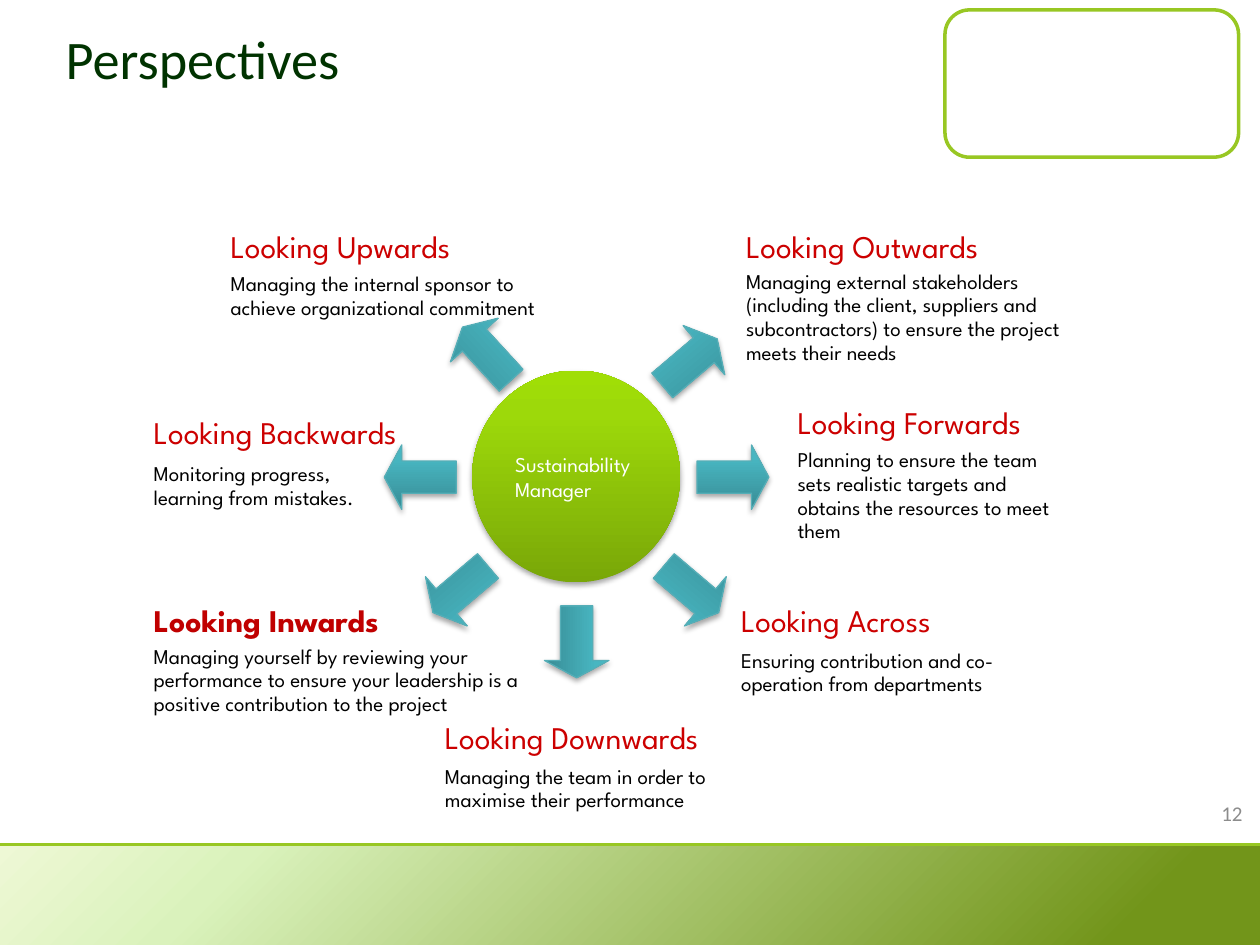
from copy import deepcopy

from lxml import etree
from pptx import Presentation
from pptx.dml.color import RGBColor
from pptx.enum.shapes import MSO_CONNECTOR, MSO_SHAPE
from pptx.enum.text import MSO_ANCHOR, PP_ALIGN
from pptx.oxml import parse_xml
from pptx.oxml.ns import nsdecls, qn
from pptx.util import Cm, Pt

LEFT, RIGHT = PP_ALIGN.LEFT, PP_ALIGN.RIGHT
MIDDLE = MSO_ANCHOR.MIDDLE
FONT = "League Spartan"
COLORS = {
    "white": "FFFFFF", "black": "000000", "title": "003300", "number": "8C8C8C",
    "green": "98C723", "heading": "CC0000", "highlight": "C00000", "arrow_line": "55AEB7",
}
RGB = {name: RGBColor.from_string(value) for name, value in COLORS.items()}
BAR = [(0, "EEF8D5"), (0.19, "DAF2BC"), (0.89, "72951A")]
CIRCLE = [(0, "79A708"), (0.8, "9DD90A"), (1, "A0DE06")]
ARROW = [(0, "388C95"), (0.8, "48B6C1"), (1, "46B9C4")]


def shade(sp, stops, angle, shadow=True):
    """Give a shape a three-stop gradient and, if wanted, a soft shadow below."""
    sp.shadow.inherit = False
    sp.fill.gradient()
    sp.fill.gradient_angle = angle
    stop_list = sp._element.spPr.find(".//" + qn("a:gsLst"))
    stop_list.append(deepcopy(stop_list[-1]))
    for stop, (position, color) in zip(sp.fill.gradient_stops, stops):
        stop.position = position
        stop.color.rgb = RGBColor.from_string(color)
    if shadow:
        sp._element.spPr.find(qn("a:effectLst")).append(parse_xml(
            f'<a:outerShdw {nsdecls("a")} blurRad="{Pt(3.1)}" dist="{Pt(1.8)}" dir="5400000" '
            'rotWithShape="0"><a:srgbClr val="000000"><a:alpha val="35000"/></a:srgbClr>'
            '</a:outerShdw>'))


def add_text(left, top, width, height, text, size, color, font=FONT, margin=0):
    tf = s.shapes.add_textbox(Cm(left), Cm(top), Cm(width), Cm(height)).text_frame
    tf.word_wrap = True
    tf.margin_left = tf.margin_right = Cm(margin)
    tf.margin_top = tf.margin_bottom = 0
    p = tf.paragraphs[0]
    p.text = text
    p.font.size, p.font.name, p.font.color.rgb = Pt(size), font, RGB[color]
    return tf


prs = Presentation()
prs.slide_width, prs.slide_height = Cm(25.4), Cm(19.05)
s = prs.slides.add_slide(prs.slide_layouts[5])

# Frame and footer band
sp = s.shapes.add_shape(MSO_SHAPE.ROUNDED_RECTANGLE, Cm(19.05), Cm(0.2), Cm(5.92), Cm(2.97))
sp.shadow.inherit = False
sp.fill.solid()
sp.fill.fore_color.rgb = RGB["white"]
sp.line.color.rgb = RGB["green"]
sp.line.width = Pt(2)

sp = s.shapes.add_shape(MSO_SHAPE.RECTANGLE, 0, Cm(17.04), prs.slide_width, Cm(2.01))
shade(sp, BAR, 315, shadow=False)
sp.line.fill.background()

rule = s.shapes.add_connector(MSO_CONNECTOR.STRAIGHT, 0, Cm(17.02), prs.slide_width, Cm(17.02))
rule.line.color.rgb = RGB["green"]
rule.line.width = Pt(1.5)
etree.SubElement(rule._element.spPr, qn("a:effectLst"))

# Title
title = s.shapes.title
title.left, title.top, title.width, title.height = Cm(1.07), 0, Cm(17.78), Cm(2.34)
title.text_frame.vertical_anchor = MIDDLE
p = title.text_frame.paragraphs[0]
p.text = "Perspectives"
p.alignment = LEFT
p.font.size, p.font.name, p.font.color.rgb = Pt(31), "Calibri", RGB["title"]

# Perspectives: left, heading top, body top, body width, body lines, heading, body
perspectives = [
    (4.65, 4.57, 5.49, 6.9, 3, "Looking Upwards",
     "Managing the internal sponsor to achieve organizational commitment"),
    (3.1, 8.33, 9.32, 5, 2, "Looking Backwards",
     "Monitoring progress, learning from mistakes."),
    (3.1, 12.12, 13, 7.7, 4, "Looking Inwards",
     "Managing yourself by reviewing your performance to ensure your leadership "
     "is a positive contribution to the project"),
    (8.97, 14.48, 15.42, 6.4, 2, "Looking Downwards",
     "Managing the team in order to maximise their performance"),
    (16.08, 8.13, 9.04, 5.5, 4, "Looking Forwards",
     "Planning to ensure the team sets realistic targets and obtains the resources "
     "to meet them"),
    (15.04, 4.57, 5.44, 7.25, 4, "Looking Outwards",
     "Managing external stakeholders (including the client, suppliers and subcontractors) "
     "to ensure the project meets their needs"),
    (14.94, 12.12, 13.08, 5.5, 3, "Looking Across",
     "Ensuring contribution and co-operation from departments"),
]
for left, top, body_top, width, lines, heading, body in perspectives:
    current = heading == "Looking Inwards"
    tf = add_text(left, top, 6.6, 0.76, heading, 18, "highlight" if current else "heading")
    tf.paragraphs[0].font.bold = current
    tf = add_text(left, body_top, width, 0.48 * lines, body, 12, "black")
    tf.paragraphs[0].line_spacing = Pt(13.5)

# Central role
sp = s.shapes.add_shape(MSO_SHAPE.OVAL, Cm(9.52), Cm(7.47), Cm(4.19), Cm(4.27))
shade(sp, CIRCLE, 90)
sp.line.fill.background()
tf = sp.text_frame
tf.word_wrap = True
tf.vertical_anchor = MIDDLE
p = tf.paragraphs[0]
p.text = "Sustainability Manager"
p.alignment = LEFT
p.font.size, p.font.name, p.font.color.rgb = Pt(12), FONT, RGB["white"]

# Arrows: left, top, rotation, flips
arrows = [
    (14.05, 8.97, 0, ""),
    (7.75, 8.97, 0, "H"),
    (13.18, 6.65, 319.7, ""),
    (9.09, 6.48, 47.5, "H"),
    (13.21, 11.23, 40.3, "V"),
    (8.56, 11.23, 319.7, "HV"),
    (10.9, 12.29, 90, ""),
]
for left, top, rotation, flips in arrows:
    sp = s.shapes.add_shape(MSO_SHAPE.RIGHT_ARROW, Cm(left), Cm(top), Cm(1.45), Cm(1.3))
    sp.adjustments[0], sp.adjustments[1] = 0.5, 0.27
    sp.rotation = rotation
    for axis in flips:
        sp._element.spPr.xfrm.set("flip" + axis, "1")
    shade(sp, ARROW, 90)
    sp.line.color.rgb = RGB["arrow_line"]
    sp.line.width = Pt(0.75)

# Slide number
tf = add_text(19.38, 15.88, 5.92, 1.02, "12", 12, "number", "Calibri", 0.25)
tf.vertical_anchor = MIDDLE
tf.paragraphs[0].alignment = RIGHT

prs.save("out.pptx")
